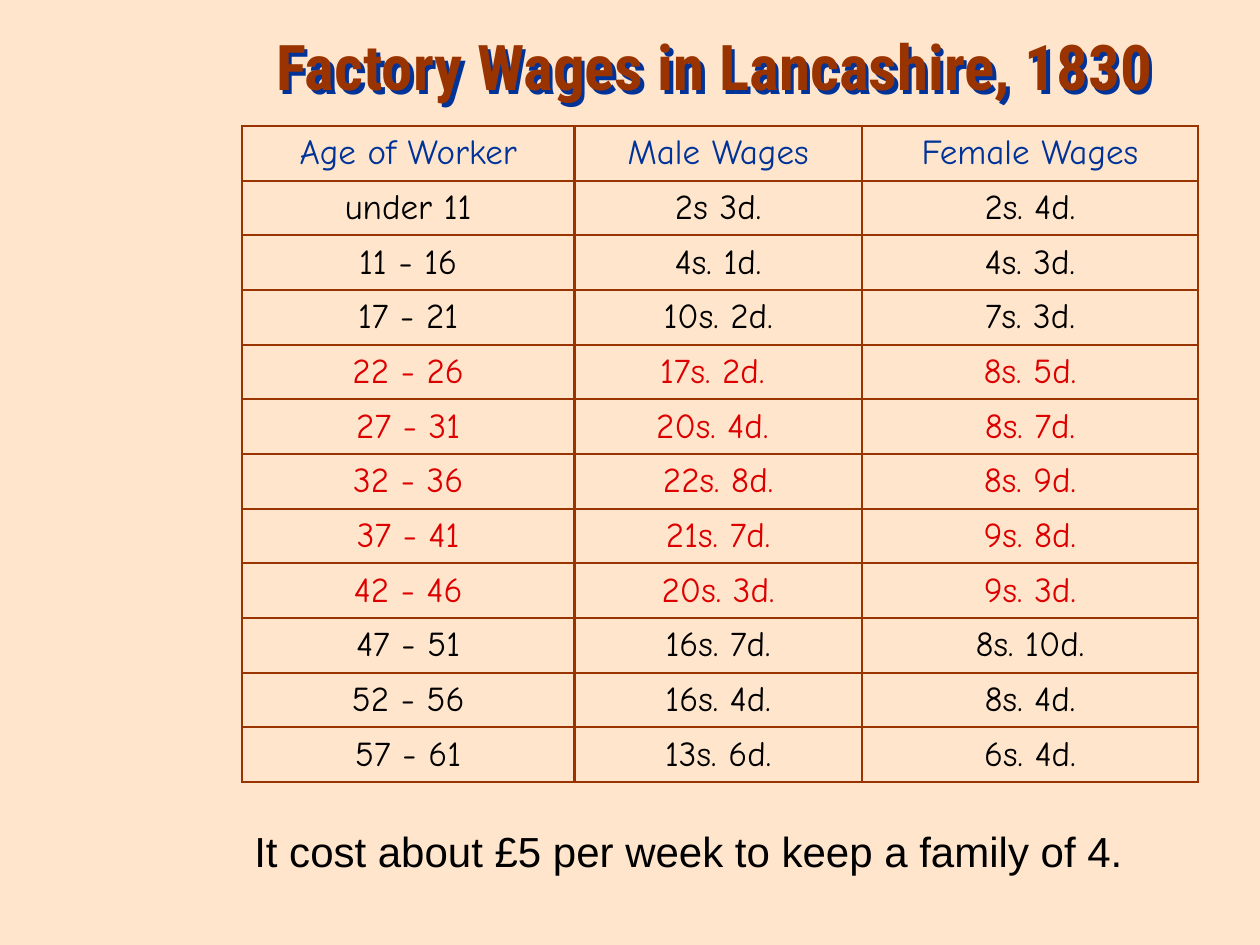
from dataclasses import dataclass
from typing import NamedTuple

from lxml import etree
from pptx import Presentation
from pptx.dml.color import RGBColor
from pptx.enum.text import MSO_ANCHOR, MSO_AUTO_SIZE, PP_ALIGN
from pptx.oxml.ns import qn
from pptx.util import Inches, Pt

CENTER = PP_ALIGN.CENTER
LEFT = PP_ALIGN.LEFT
MIDDLE = MSO_ANCHOR.MIDDLE
GROW = MSO_AUTO_SIZE.SHAPE_TO_FIT_TEXT
BLANK_LAYOUT = 6
SLIDE_WIDTH, SLIDE_HEIGHT = Inches(10), Inches(7.5)
COLUMN_SHARES = (0.264, 0.228, 0.267)
ROW_SHARE = 5.2 / 12 / 7.5


@dataclass(frozen=True)
class Theme:
    background: str = "FFE5CB"
    brown: str = "993300"
    blue: str = "003399"
    red: str = "DC0000"
    black: str = "000000"
    title_font: str = "Roboto Condensed"
    table_font: str = "Comic Neue"
    note_font: str = "Arial"
    title_size: float = 36
    table_size: float = 20
    note_size: float = 24
    border_width: float = 1.5


class Area(NamedTuple):
    left: float
    top: float
    width: float
    height: float

    def lengths(self) -> tuple[int, int, int, int]:
        return (
            round(self.left * SLIDE_WIDTH),
            round(self.top * SLIDE_HEIGHT),
            round(self.width * SLIDE_WIDTH),
            round(self.height * SLIDE_HEIGHT),
        )


class WageRow(NamedTuple):
    age: str
    male: str
    female: str
    color: str


THEME = Theme()
TITLE_AREA = Area(0.142, 0.17 / 7.5, 0.85, 0.71 / 7.5)
TABLE_AREA = Area(0.192, 1 / 7.5, sum(COLUMN_SHARES), 12 * ROW_SHARE)
NOTE_AREA = Area(0.192, 6.5 / 7.5, 0.758, 0.5 / 7.5)

WAGES = [
    WageRow("Age of Worker", "Male Wages", "Female Wages", THEME.blue),
    WageRow("under 11", "2s 3d.", "2s. 4d.", THEME.black),
    WageRow("11 - 16", "4s. 1d.", "4s. 3d.", THEME.black),
    WageRow("17 - 21", "10s. 2d.", "7s. 3d.", THEME.black),
    WageRow("22 - 26", "17s. 2d. ", "8s. 5d.", THEME.red),
    WageRow("27 - 31", "20s. 4d. ", "8s. 7d.", THEME.red),
    WageRow("32 - 36", "22s. 8d.", "8s. 9d.", THEME.red),
    WageRow("37 - 41", "21s. 7d.", "9s. 8d.", THEME.red),
    WageRow("42 - 46", "20s. 3d.", "9s. 3d.", THEME.red),
    WageRow("47 - 51", "16s. 7d.", "8s. 10d.", THEME.black),
    WageRow("52 - 56", "16s. 4d.", "8s. 4d.", THEME.black),
    WageRow("57 - 61", "13s. 6d.", "6s. 4d.", THEME.black),
]


def write_text(text_frame, text: str, *, font: str, size: float, color: str,
               bold: bool = False, align=LEFT) -> None:
    paragraph = text_frame.paragraphs[0]
    paragraph.alignment = align
    run = paragraph.add_run()
    run.text = text
    run.font.name = font
    run.font.size = Pt(size)
    run.font.bold = bold
    run.font.color.rgb = RGBColor.from_string(color)


def add_text_box(slide, area: Area, text: str, **text_format):
    shape = slide.shapes.add_textbox(*area.lengths())
    shape.text_frame.word_wrap = True
    shape.text_frame.auto_size = GROW
    write_text(shape.text_frame, text, **text_format)
    return shape


def add_color(parent, color: str) -> None:
    etree.SubElement(parent, qn("a:srgbClr"), val=color)


def add_text_shadow(shape, color: str) -> None:
    effects = etree.SubElement(shape.element.spPr, qn("a:effectLst"))
    shadow = etree.SubElement(effects, qn("a:outerShdw"), dist=str(Pt(2.8)),
                              dir="2700000", algn="ctr", rotWithShape="0")
    add_color(shadow, color)


def set_borders(cell, color: str, width: float) -> None:
    properties = cell._tc.get_or_add_tcPr()
    for position, side in enumerate(("lnL", "lnR", "lnT", "lnB")):
        line = etree.Element(qn(f"a:{side}"), w=str(Pt(width)))
        add_color(etree.SubElement(line, qn("a:solidFill")), color)
        properties.insert(position, line)


def add_wage_table(slide, area: Area, rows: list[WageRow]) -> None:
    table = slide.shapes.add_table(len(rows), len(COLUMN_SHARES), *area.lengths()).table
    for column, share in zip(table.columns, COLUMN_SHARES):
        column.width = round(share * SLIDE_WIDTH)
    for row_index, wage_row in enumerate(rows):
        table.rows[row_index].height = round(ROW_SHARE * SLIDE_HEIGHT)
        for column_index, text in enumerate(wage_row[:3]):
            cell = table.cell(row_index, column_index)
            cell.fill.background()
            cell.vertical_anchor = MIDDLE
            set_borders(cell, THEME.brown, THEME.border_width)
            write_text(cell.text_frame, text, font=THEME.table_font,
                       size=THEME.table_size, color=wage_row.color, align=CENTER)


def main() -> None:
    presentation = Presentation()
    presentation.slide_width = SLIDE_WIDTH
    presentation.slide_height = SLIDE_HEIGHT
    slide = presentation.slides.add_slide(presentation.slide_layouts[BLANK_LAYOUT])
    slide.background.fill.solid()
    slide.background.fill.fore_color.rgb = RGBColor.from_string(THEME.background)

    title = add_text_box(slide, TITLE_AREA, "Factory Wages in Lancashire, 1830",
                         font=THEME.title_font, size=THEME.title_size,
                         color=THEME.brown, bold=True, align=CENTER)
    add_text_shadow(title, THEME.blue)
    add_wage_table(slide, TABLE_AREA, WAGES)
    add_text_box(slide, NOTE_AREA, "It cost about £5 per week to keep a family of 4.",
                 font=THEME.note_font, size=THEME.note_size, color=THEME.black)
    presentation.save("out.pptx")


if __name__ == "__main__":
    main()
